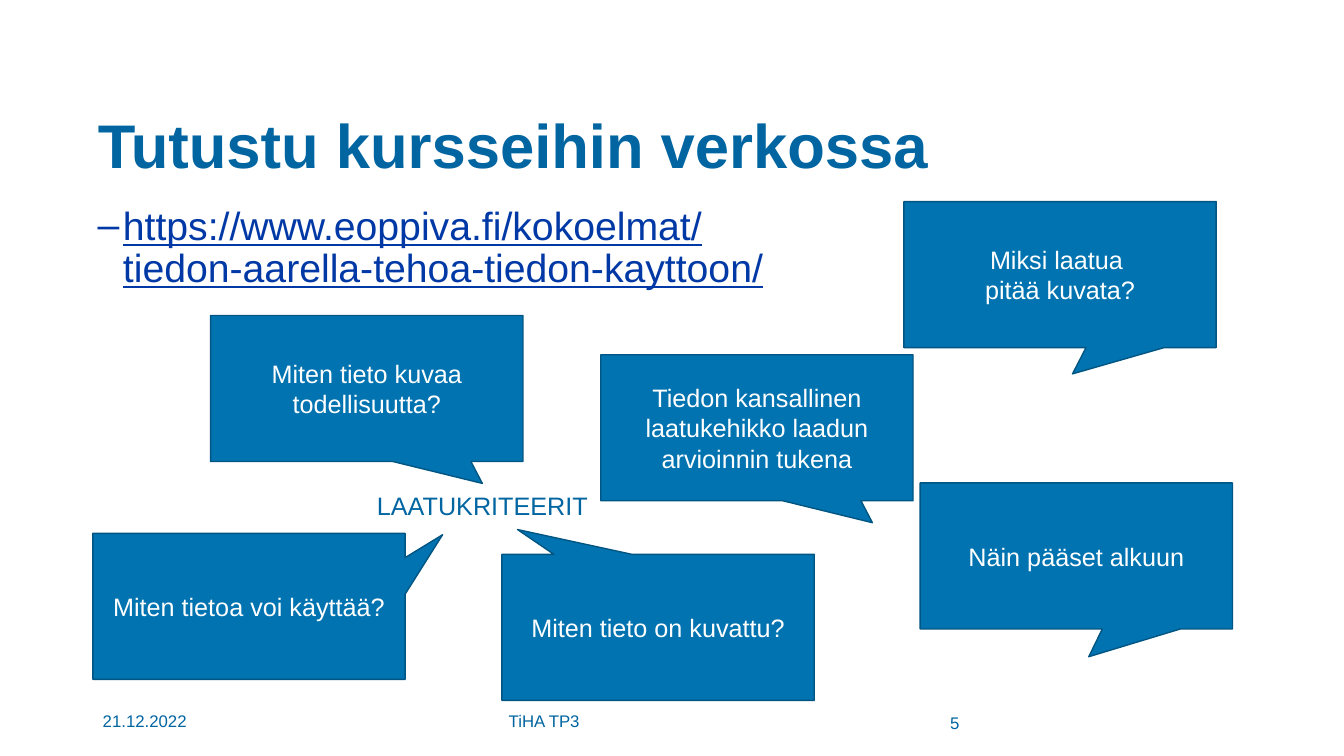
import pptx
import pptx.dml.color
import pptx.enum.shapes
import pptx.enum.text
import pptx.util
from lxml import etree
from pptx.oxml.ns import qn

Cm, Pt = pptx.util.Cm, pptx.util.Pt
RGBColor = pptx.dml.color.RGBColor
ALIGN = pptx.enum.text.PP_ALIGN
ANCHOR = pptx.enum.text.MSO_ANCHOR

TITLE_BLUE = RGBColor(0x00, 0x65, 0xA1)
LINK_BLUE = RGBColor(0x00, 0x39, 0xA6)
CALLOUT_BLUE = RGBColor(0x00, 0x73, 0xB0)
EDGE_BLUE = RGBColor(0x00, 0x55, 0x82)
WHITE = RGBColor(0xFF, 0xFF, 0xFF)

TITLE = "Tutustu kursseihin verkossa"
TITLE_PLACE = (2.21, 1.02, 27.28, 3.68)
LINK = "https://www.eoppiva.fi/kokoelmat/\vtiedon-aarella-tehoa-tiedon-kayttoon/"
LINK_PLACE = (2.21, 5.08, 19, 11.43)
CRITERIA = "LAATUKRITEERIT"
CRITERIA_PLACE = (9.25, 12.22, 5.87, 1.02)
FOOTERS = [
    ("21.12.2022", (2.34, 17.65, 4.9, 1.02), ALIGN.LEFT),
    ("TiHA TP3", (7.24, 17.65, 12.95, 1.02), ALIGN.CENTER),
    ("5", (23.19, 17.7, 1.24, 1.02), ALIGN.RIGHT),
]
CALLOUT_SIZE = (7.87, 3.68)
CALLOUTS = [
    ("Miksi laatua \vpitää kuvata?", (22.78, 5.08), (0.04, 0.68)),
    ("Tiedon kansallinen laatukehikko laadun arvioinnin tukena", (15.14, 8.94), (0.37, 0.65)),
    ("Miten tieto kuvaa todellisuutta?", (5.31, 7.95), (0.37, 0.65)),
    ("Miten tieto on kuvattu?", (12.65, 13.97), (-0.45, -0.67)),
    ("Miten tietoa voi käyttää?", (2.34, 13.44), (0.62, -0.49)),
    ("Näin pääset alkuun", (23.19, 12.17), (0.04, 0.69)),
]


def apply(target, values):
    """Set each named attribute of the target."""
    for name, value in values.items():
        setattr(target, name, value)


def write(shape, text, size, color, frame_format, para_format, **font_format):
    """Write one formatted paragraph into a shape and return it."""
    frame = shape.text_frame
    frame.text = text
    apply(frame, {"word_wrap": True, "vertical_anchor": ANCHOR.MIDDLE} | frame_format)
    para = frame.paragraphs[0]
    apply(para, {"alignment": ALIGN.LEFT, "space_before": Pt(0)} | para_format)
    for span in para.runs:
        apply(span.font, {"name": "Arial", "size": Pt(size)} | font_format)
        span.font.color.rgb = color
    return para


def add_title(page):
    """Place and format the title."""
    title = page.shapes.title
    apply(title, dict(zip(("left", "top", "width", "height"), map(Cm, TITLE_PLACE))))
    write(title, TITLE, 44, TITLE_BLUE, {"vertical_anchor": ANCHOR.BOTTOM},
          {"line_spacing": 0.9}, bold=True)


def add_box(page, place):
    """Add a text box at a place given in centimetres."""
    return page.shapes.add_textbox(*map(Cm, place))


def add_link(page):
    """Add the dashed address line."""
    para = write(add_box(page, LINK_PLACE), LINK, 28, LINK_BLUE,
                 {"vertical_anchor": ANCHOR.TOP}, {"line_spacing": 0.9}, underline=True)
    properties = para._p.get_or_add_pPr()
    properties.set("marL", str(Cm(0.64)))
    properties.set("indent", str(-Cm(0.64)))
    etree.SubElement(properties, qn("a:buFont")).set("typeface", "Arial")
    etree.SubElement(properties, qn("a:buChar")).set("char", "–")


def add_callout(page, text, corner, tip):
    """Add one speech callout whose tip is relative to its centre."""
    kind = pptx.enum.shapes.MSO_SHAPE.RECTANGULAR_CALLOUT
    callout = page.shapes.add_shape(kind, *map(Cm, corner + CALLOUT_SIZE))
    callout.adjustments[0], callout.adjustments[1] = tip
    callout.shadow.inherit = False
    callout.fill.solid()
    callout.fill.fore_color.rgb = CALLOUT_BLUE
    callout.line.color.rgb = EDGE_BLUE
    callout.line.width = Pt(1)
    write(callout, text, 18, WHITE, {}, {"alignment": ALIGN.CENTER})


def main():
    """Build and save the slide."""
    deck = pptx.Presentation()
    apply(deck, {"slide_width": Cm(33.87), "slide_height": Cm(19.05)})
    page = deck.slides.add_slide(deck.slide_layouts[5])
    add_title(page)
    for text, place, alignment in FOOTERS:
        write(add_box(page, place), text, 12, TITLE_BLUE, {}, {"alignment": alignment})
    add_link(page)
    for text, corner, tip in CALLOUTS:
        add_callout(page, text, corner, tip)
    write(add_box(page, CRITERIA_PLACE), CRITERIA, 18, TITLE_BLUE,
          {"word_wrap": False, "vertical_anchor": ANCHOR.TOP}, {})
    deck.save("out.pptx")


if __name__ == "__main__":
    main()
